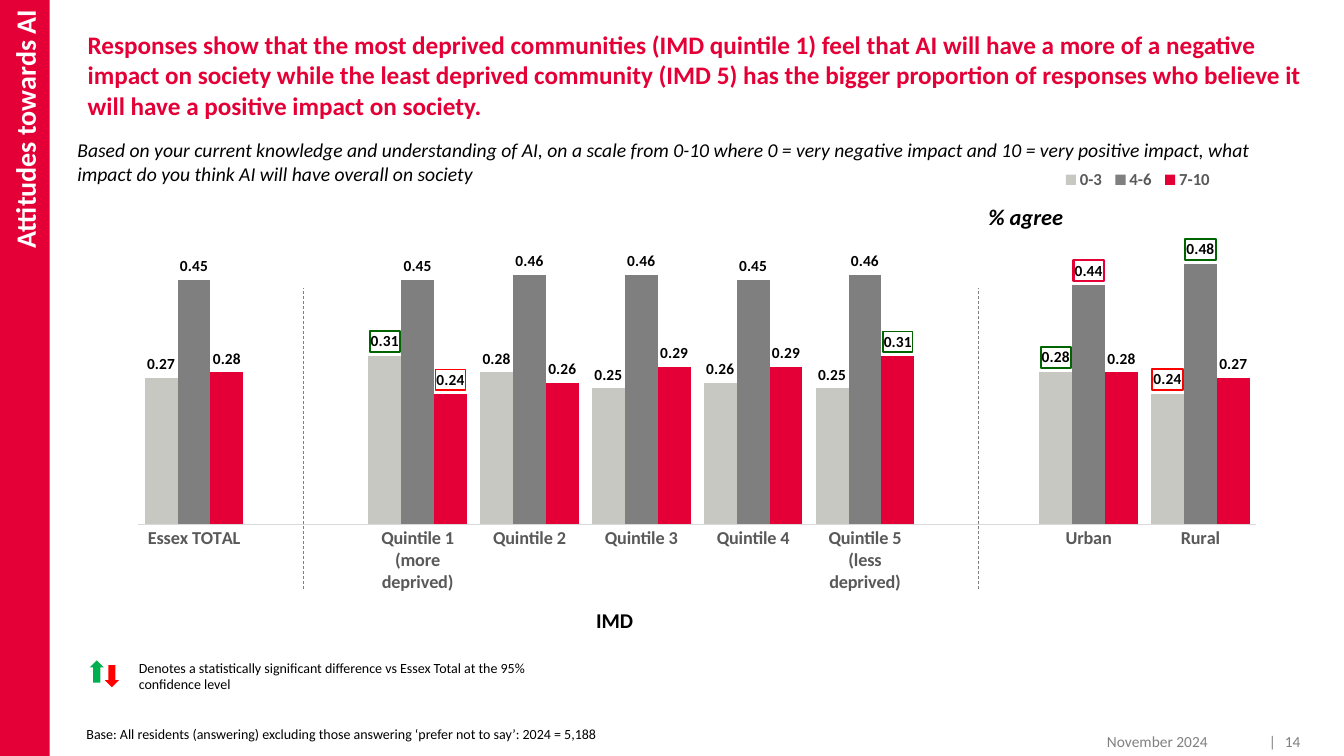
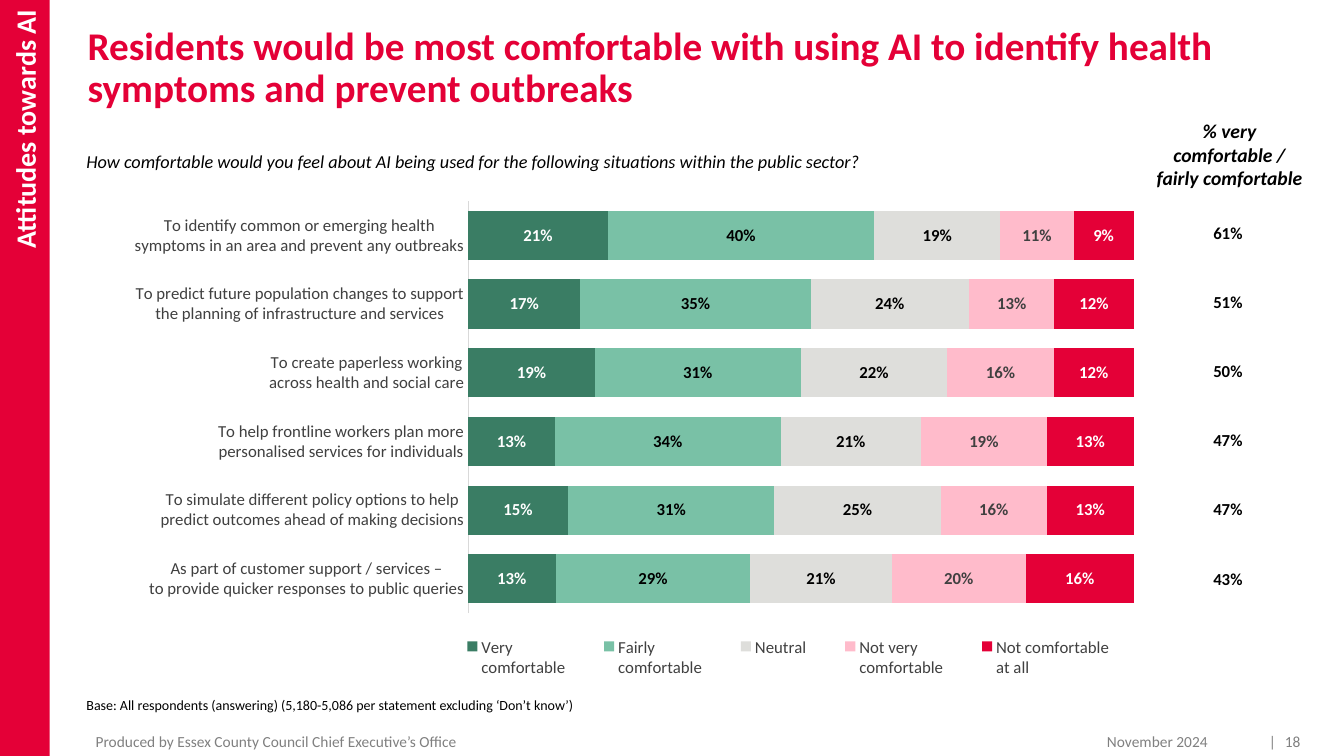
from lxml.etree import SubElement
from pptx import Presentation
from pptx.chart.data import CategoryChartData as Data
from pptx.dml.color import RGBColor as RGB
from pptx.enum.chart import XL_CHART_TYPE as Kind, XL_LABEL_POSITION as Spot
from pptx.enum.chart import XL_LEGEND_POSITION as Side, XL_TICK_MARK as Tick
from pptx.enum.dml import MSO_LINE as Dash
from pptx.enum.shapes import MSO_CONNECTOR as Link, MSO_SHAPE as Form
from pptx.enum.text import MSO_ANCHOR as Anchor, PP_ALIGN as Align
from pptx.oxml import parse_xml
from pptx.oxml.ns import nsdecls, qn
from pptx.util import Cm, Pt

WIDE, HIGH = 33.87, 19.05
FACE = "Calibri"
INK = {
    "brand": "E40037", "white": "FFFFFF", "black": "000000",
    "foot": "808080", "mid": "7F7F7F", "pale": "C8C8C3",
    "axis": "D9D9D9", "label": "595959", "dark": "404040",
    "up": "00B050", "down": "FF0000", "high": "006400",
    "forest": "3A7D64", "mint": "79C1A6", "mist": "DEDEDB", "pink": "FFBBCB",
}


def tone(name):
    """Return the colour with this name."""
    return RGB.from_string(INK[name])


def style(font, size, ink="black", bold=False, italic=False):
    """Set the face, size, colour and weight of a font."""
    font.name, font.size = FACE, Pt(size)
    font.bold, font.italic = bold, italic
    font.color.rgb = tone(ink)


def fit(frame, ins):
    """Wrap a text frame and set its insets in centimetres."""
    frame.word_wrap = True
    (frame.margin_left, frame.margin_top,
     frame.margin_right, frame.margin_bottom) = map(Cm, ins)


def write(slide, box, text, size, ink="black", bold=False, italic=False,
          align=Align.LEFT, ins=(0.25, 0.13, 0.25, 0.13)):
    """Add a text box with one paragraph and return the paragraph."""
    frame = slide.shapes.add_textbox(*map(Cm, box)).text_frame
    fit(frame, ins)
    para = frame.paragraphs[0]
    para.text, para.alignment = text, align
    for run in para.runs:
        style(run.font, size, ink, bold, italic)
    return para


def shape(slide, form, box, ink):
    """Add a flat filled shape without an outline."""
    item = slide.shapes.add_shape(form, *map(Cm, box))
    item.shadow.inherit = False
    item.fill.solid()
    item.fill.fore_color.rgb = tone(ink)
    item.line.fill.background()
    return item


def band(slide, box, text):
    """Add the red side band with its upright section name."""
    frame = shape(slide, Form.RECTANGLE, box, "brand").text_frame
    fit(frame, (0.25, 0.25, 0.25, 0.13))
    frame.vertical_anchor = Anchor.MIDDLE
    frame.text = text
    para = frame.paragraphs[0]
    para.alignment = Align.RIGHT
    style(para.runs[0].font, 20, "white", True)
    frame._txBody.bodyPr.set("vert", "vert270")


def footer(slide, box, page):
    """Add the date and the page number at the right end of a strip."""
    x, y, w, h = box
    end = x + w
    write(slide, (end - 8.48, y, 6.1, h), "November 2024", 11, "foot",
          align=Align.RIGHT)
    para = write(slide, (end - 1.09, y, 1.5, h), f"|\t{page}", 11, "foot",
                 ins=(0, 0.13, 0, 0.13))
    tabs = SubElement(para._p.get_or_add_pPr(), qn("a:tabLst"))
    SubElement(tabs, qn("a:tab"), pos=str(Cm(0.4)), algn="l")


def title(slide, box, text, size, gap=1.0):
    """Add the red slide title."""
    para = write(slide, box, text, size, "brand", True,
                 ins=(0.25, 0.13, 0.25, 0))
    para.line_spacing = gap


def base(deck, page):
    """Add a blank slide with the shared band and footer."""
    slide = deck.slides.add_slide(deck.slide_layouts[6])
    band(slide, (0, 0, 1.25, HIGH), "Attitudes towards AI")
    footer(slide, (2.16, 18.31, 30.91, 0.38), page)
    return slide


def layout(node, spot, area, inner=False):
    """Fix the place of a chart part as fractions of the chart."""
    for old in node.findall(qn("c:layout")):
        node.remove(old)
    goal = '<c:layoutTarget val="inner"/>' if inner else ""
    modes = "".join(f'<c:{k}Mode val="edge"/>' for k in "xy")
    sizes = "".join(f'<c:{k} val="{v}"/>' for k, v in zip("xywh", area))
    node.insert(spot, parse_xml(
        f'<c:layout {nsdecls("c")}><c:manualLayout>{goal}{modes}{sizes}'
        "</c:manualLayout></c:layout>"))


def plot(slide, box, kind, cats, rows, area, key, side, top, text, fmt):
    """Add a bar chart; rows hold name, values, fill and label colour."""
    data = Data(number_format=fmt)
    data.categories = cats
    for name, vals, _, _ in rows:
        data.add_series(name, vals)
    chart = slide.shapes.add_chart(kind, *map(Cm, box), data).chart
    chart.has_title = False
    style(chart.font, 10)
    layout(chart._chartSpace.chart.plotArea, 0, area, True)

    chart.has_legend = True
    legend = chart.legend
    legend.position, legend.include_in_layout = side, False
    style(legend.font, 12, *text[1:])
    layout(legend._element, 1, key)

    axis = chart.category_axis
    axis.major_tick_mark = axis.minor_tick_mark = Tick.NONE
    axis.has_major_gridlines = False
    axis.format.line.color.rgb = tone("axis")
    axis.format.line.width = Pt(0.75)
    style(axis.tick_labels.font, *text)
    scale = chart.value_axis
    scale.has_major_gridlines = scale.visible = False
    scale.minimum_scale, scale.maximum_scale = 0, top

    bars = chart.plots[0]
    bars.gap_width, bars.vary_by_categories = 40, False
    for line, (_, _, fill, ink) in zip(bars.series, rows):
        line.format.fill.solid()
        line.format.fill.fore_color.rgb = tone(fill)
        line.invert_if_negative = False
        tags = line.data_labels
        tags.show_value = True
        tags.number_format, tags.number_format_is_linked = fmt, False
        style(tags.font, 11 if top < 1 else 12, ink, True)
    return chart


def mark(line, spot, ink, width):
    """Draw a frame around the label of one bar."""
    tag = line.points[spot].data_label
    style(tag.font, 11, "black", True)
    tag.position = Spot.OUTSIDE_END
    text = line._element.xpath(
        f'c:dLbls/c:dLbl[c:idx/@val="{spot}"]/c:txPr')[0]
    text.addprevious(parse_xml(
        f'<c:spPr {nsdecls("c", "a")}><a:noFill/><a:ln w="{Pt(width)}">'
        f'<a:solidFill><a:srgbClr val="{INK[ink]}"/></a:solidFill>'
        "</a:ln></c:spPr>"))


def groups(slide, box):
    """Add the clustered chart with its dividers and group name."""
    x, y, _, _ = box
    cats = ["Essex TOTAL", "", "Quintile 1 (more deprived)", "Quintile 2",
            "Quintile 3", "Quintile 4", "Quintile 5 (less deprived)", "",
            "Urban", "Rural"]
    rows = [
        ("0-3", (.27, None, .31, .28, .25, .26, .25, None, .28, .24),
         "pale", "black"),
        ("4-6", (.45, None, .45, .46, .46, .45, .46, None, .44, .48),
         "mid", "black"),
        ("7-10", (.28, None, .24, .26, .29, .29, .31, None, .28, .27),
         "brand", "black"),
    ]
    chart = plot(slide, box, Kind.COLUMN_CLUSTERED, cats, rows,
                 (0.008, 0.087, 0.981, 0.641), (0.815, 0.025, 0.14, 0.05),
                 Side.TOP, 0.6, (13, "label", True), "General")
    bars = chart.plots[0]
    bars.overlap = 0
    for line in bars.series:
        line.data_labels.position = Spot.OUTSIDE_END
    for row, spot, ink, width in (
            (0, 2, "high", 1.5), (0, 8, "high", 1.5), (0, 9, "down", 1.5),
            (1, 8, "brand", 1.5), (1, 9, "high", 1.5),
            (2, 2, "down", 1), (2, 6, "high", 1)):
        mark(bars.series[row], spot, ink, width)
    for left in (4.4, 21.41):
        rule = slide.shapes.add_connector(
            Link.STRAIGHT, Cm(x + left), Cm(y + 10.94),
            Cm(x + left), Cm(y + 3.37))
        rule.line.color.rgb = tone("mid")
        rule.line.width, rule.line.dash_style = Pt(0.5), Dash.DASH
        SubElement(rule._element.spPr, qn("a:effectLst"))
    write(slide, (x + 21.41, y + 1.11, 8.69, 0.94), "% agree", 16,
          bold=True, italic=True)
    write(slide, (x + 9.6, y + 11.43, 5.28, 1.09), "IMD", 15, bold=True,
          align=Align.CENTER, ins=(0, 0, 0, 0))


def guide(slide, box):
    """Add the arrows and the note on significance."""
    x, y, w, h = box
    shape(slide, Form.UP_ARROW, (x, y + 0.16, 0.36, 0.56), "up")
    shape(slide, Form.DOWN_ARROW, (x + 0.38, y + 0.28, 0.36, 0.56), "down")
    write(slide, (x + 0.99, y, w - 0.99, h),
          "Denotes a statistically significant difference vs Essex Total "
          "at the 95% confidence level", 10)


def shares(slide, box):
    """Add the stacked chart of comfort by situation."""
    cats = [
        "To identify common or emerging health\n"
        "symptoms in an area and prevent any outbreaks",
        "To predict future population changes to support\n"
        "the planning of infrastructure and services",
        "To create paperless working\nacross health and social care",
        "To help frontline workers plan more\n"
        "personalised services for individuals",
        "To simulate different policy options to help\n"
        "predict outcomes ahead of making decisions",
        "As part of customer support / services –\n"
        "to provide quicker responses to public queries",
    ]
    rows = [
        ("Very\ncomfortable", (.21, .17, .19, .13, .15, .13),
         "forest", "white"),
        ("Fairly\ncomfortable", (.4, .35, .31, .34, .31, .29),
         "mint", "black"),
        ("Neutral", (.19, .24, .22, .21, .25, .21), "mist", "black"),
        ("Not very\ncomfortable", (.11, .13, .16, .19, .16, .2),
         "pink", "dark"),
        ("Not comfortable\nat all", (.09, .12, .12, .13, .13, .16),
         "brand", "white"),
    ]
    chart = plot(slide, box, Kind.BAR_STACKED_100, cats, rows,
                 (0.367, 0, 0.526, 0.821), (0.34, 0.86, 0.56, 0.1),
                 Side.BOTTOM, 1, (12, "dark"), "0%")
    chart.plots[0].overlap = 100
    chart.category_axis.reverse_order = True


def scores(slide, box):
    """Add the column of summed shares under its heading."""
    x, y, w, _ = box
    write(slide, (x, y, w, 2.06), "% very comfortable / fairly comfortable",
          14, bold=True, italic=True, align=Align.CENTER)
    for i, val in enumerate((61, 51, 50, 47, 47, 43)):
        write(slide, (x + 1.46, y + 2.62 + 1.74 * i, 1.37, 0.76), f"{val}%",
              12, bold=True, align=Align.CENTER, ins=(0, 0.13, 0, 0.13))


def impact(deck):
    """Build the slide on the impact of AI by community."""
    slide = base(deck, 14)
    title(slide, (1.96, 0.61, 31.12, 3.25),
          "Responses show that the most deprived communities (IMD quintile 1) "
          "feel that AI will have a more of a negative impact on society "
          "while the least deprived community (IMD 5) has the bigger "
          "proportion of responses who believe it will have a positive "
          "impact on society.", 18)
    write(slide, (1.7, 3.35, 31.37, 1.45),
          "Based on your current knowledge and understanding of AI, on a "
          "scale from 0-10 where 0 = very negative impact and 10 = very "
          "positive impact, what impact do you think AI will have overall "
          "on society", 14, italic=True)
    groups(slide, (3.25, 3.89, 28.73, 12.8))
    guide(slide, (2.26, 16.48, 11.99, 1.12))
    write(slide, (1.93, 18.16, 19.74, 0.69),
          "Base: All residents (answering) excluding those answering "
          "‘prefer not to say’: 2024 = 5,188", 10)


def comfort(deck):
    """Build the slide on comfort with AI in public services."""
    slide = base(deck, 18)
    title(slide, (1.96, 0.53, 31.12, 2.29),
          "Residents would be most comfortable with using AI to identify "
          "health symptoms and prevent outbreaks", 28, 0.9)
    write(slide, (1.93, 3.66, 26.5, 0.81),
          "How comfortable would you feel about AI being used for the "
          "following situations within the public sector?", 13, italic=True)
    shares(slide, (0.1, 5.05, 31.88, 12.67))
    scores(slide, (28.8, 2.87, 4.37, 13))
    write(slide, (1.93, 17.42, 28.7, 0.69),
          "Base: All respondents (answering) (5,180-5,086 per statement "
          "excluding ‘Don’t know’)", 10)
    write(slide, (2.16, 18.31, 16.38, 0.38),
          "Produced by Essex County Council Chief Executive’s Office",
          11, "foot")


def main():
    """Build and save the deck."""
    deck = Presentation()
    deck.slide_width, deck.slide_height = Cm(WIDE), Cm(HIGH)
    impact(deck)
    comfort(deck)
    deck.save("out.pptx")


if __name__ == "__main__":
    main()
